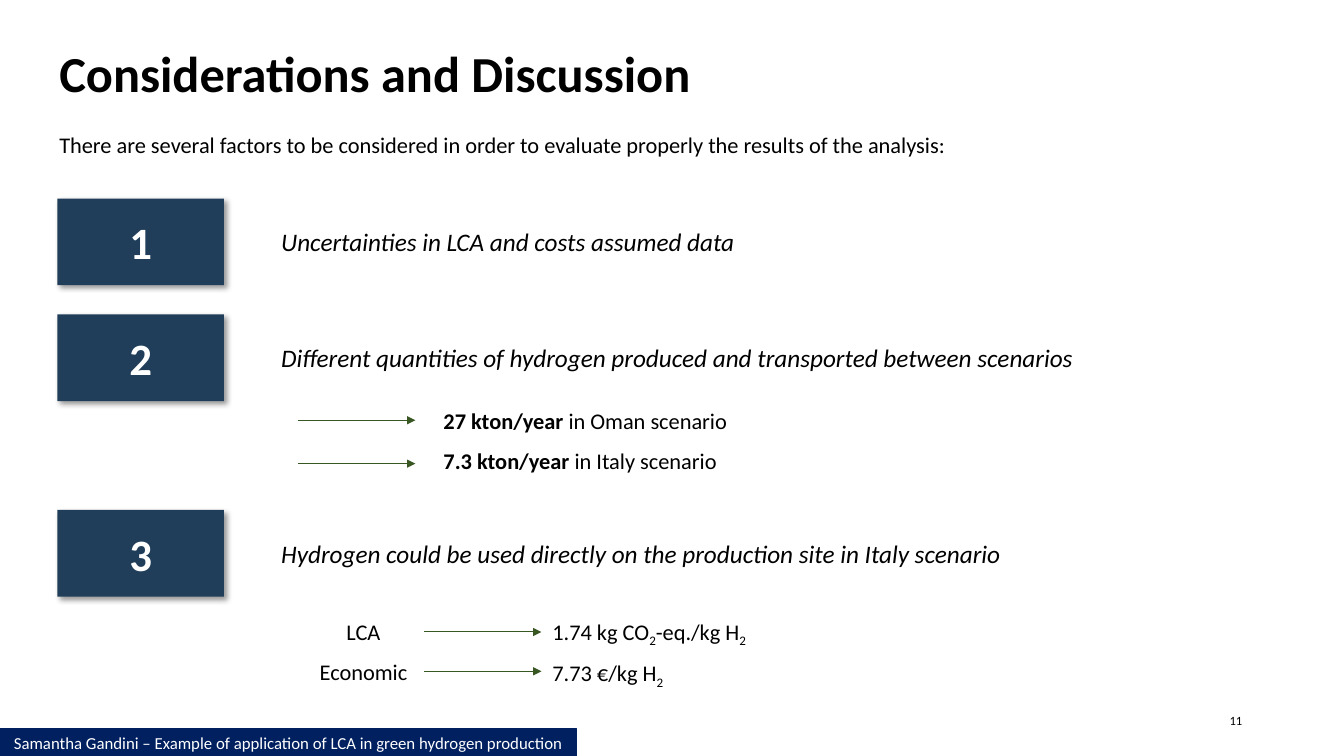
"""Build the "Considerations and Discussion" slide on green hydrogen scenarios."""
from lxml import etree
from pptx import Presentation
from pptx.dml.color import RGBColor
from pptx.enum.shapes import MSO_CONNECTOR, MSO_SHAPE
from pptx.enum.text import MSO_ANCHOR, PP_ALIGN
from pptx.oxml import parse_xml
from pptx.oxml.ns import nsdecls, qn
from pptx.util import Inches, Pt

BLACK = RGBColor(0x00, 0x00, 0x00)
WHITE = RGBColor(0xFF, 0xFF, 0xFF)
FOOTER_BLUE = RGBColor(0x00, 0x20, 0x60)
BOX_BLUE = RGBColor(0x20, 0x3E, 0x5A)
ARROW_GREEN = RGBColor(0x38, 0x57, 0x23)


def write_text(shape, runs, size, color=BLACK, align=PP_ALIGN.LEFT, anchor=MSO_ANCHOR.TOP,
               bold=False, italic=False):
    frame = shape.text_frame
    frame.word_wrap = True
    frame.vertical_anchor = anchor
    paragraph = frame.paragraphs[0]
    paragraph.alignment = align
    font = paragraph.font
    font.name, font.size, font.bold, font.italic = "Calibri", Pt(size), bold, italic
    font.color.rgb = color
    for text, style in runs:
        run = paragraph.add_run()
        run.text = text
        if style == "bold":
            run.font.bold = True
        elif style == "subscript":
            run.font._element.set("baseline", "-25000")


def add_box(left, top, width, height, color):
    box = slide.shapes.add_shape(
        MSO_SHAPE.RECTANGLE, Inches(left), Inches(top), Inches(width), Inches(height))
    box.shadow.inherit = False
    box.fill.solid()
    box.fill.fore_color.rgb = color
    box.line.fill.background()
    return box


presentation = Presentation()
presentation.slide_width = Inches(13.33)
presentation.slide_height = Inches(7.5)
slide = presentation.slides.add_slide(presentation.slide_layouts[6])

footer = add_box(0, 7.23, 5.72, 0.27, FOOTER_BLUE)
footer.line.color.rgb = FOOTER_BLUE
footer.line.width = Pt(1)
footer_text = "Samantha Gandini – Example of application of LCA in green hydrogen production"
write_text(footer, [(footer_text, "")], 12, WHITE, PP_ALIGN.CENTER, MSO_ANCHOR.MIDDLE)

title = slide.shapes.add_textbox(Inches(0.49), Inches(0.37), Inches(11.14), Inches(0.71))
write_text(title, [("Considerations and Discussion", "")], 36, bold=True)

page_number = slide.shapes.add_textbox(Inches(9.42), Inches(6.95), Inches(3), Inches(0.4))
write_text(page_number, [("11", "")], 9, align=PP_ALIGN.RIGHT, anchor=MSO_ANCHOR.MIDDLE)

intro = slide.shapes.add_textbox(Inches(0.49), Inches(1.25), Inches(12.8), Inches(0.37))
intro_text = ("There are several factors to be considered in order to evaluate properly "
              "the results of the analysis:")
write_text(intro, [(intro_text, "")], 16)

considerations = [
    (1.97, "Uncertainties in LCA and costs assumed data"),
    (3.12, "Different quantities of hydrogen produced and transported between scenarios"),
    (5.06, "Hydrogen could be used directly on the production site in Italy scenario"),
]
for number, (top, statement) in enumerate(considerations, start=1):
    number_box = add_box(0.57, top, 1.65, 0.86, BOX_BLUE)
    effects = number_box._element.spPr.find(qn("a:effectLst"))
    effects.append(parse_xml(
        f'<a:outerShdw {nsdecls("a")} blurRad="50800" dist="38100" dir="2700000" algn="tl" '
        'rotWithShape="0"><a:srgbClr val="000000"><a:alpha val="40000"/></a:srgbClr>'
        '</a:outerShdw>'))
    write_text(number_box, [(str(number), "")], 32, WHITE, PP_ALIGN.CENTER,
               MSO_ANCHOR.MIDDLE, bold=True)
    statement_box = slide.shapes.add_textbox(
        Inches(2.69), Inches(top + 0.23), Inches(9.87), Inches(0.4))
    write_text(statement_box, [(statement, "")], 18, italic=True)

details = [
    (4.3, 3.99, 3.78, [("27 kton/year ", "bold"), ("in Oman scenario", "")]),
    (4.3, 4.39, 3.78, [("7.3 kton/year ", "bold"), ("in Italy scenario", "")]),
    (5.38, 6.08, 3.11, [("1.74 kg CO", ""), ("2", "subscript"), ("-eq./kg H", ""),
                        ("2", "subscript")]),
    (5.38, 6.49, 3.11, [("7.73 €/kg H", ""), ("2", "subscript")]),
]
for left, top, width, runs in details:
    detail = slide.shapes.add_textbox(Inches(left), Inches(top), Inches(width), Inches(0.37))
    write_text(detail, runs, 16)

for top, label in [(6.08, "LCA"), (6.48, "Economic")]:
    label_box = slide.shapes.add_textbox(Inches(2.96), Inches(top), Inches(1.29), Inches(0.37))
    write_text(label_box, [(label, "")], 16, align=PP_ALIGN.CENTER)

for left, y in [(2.96, 4.17), (2.96, 4.6), (4.21, 6.27), (4.21, 6.66)]:
    arrow = slide.shapes.add_connector(
        MSO_CONNECTOR.STRAIGHT, Inches(left), Inches(y), Inches(left + 1.16), Inches(y))
    arrow.line.color.rgb = ARROW_GREEN
    arrow.line.width = Pt(0.75)
    etree.SubElement(arrow.line._get_or_add_ln(), qn("a:tailEnd"), type="triangle")
    etree.SubElement(arrow._element.spPr, qn("a:effectLst"))

presentation.save("out.pptx")
